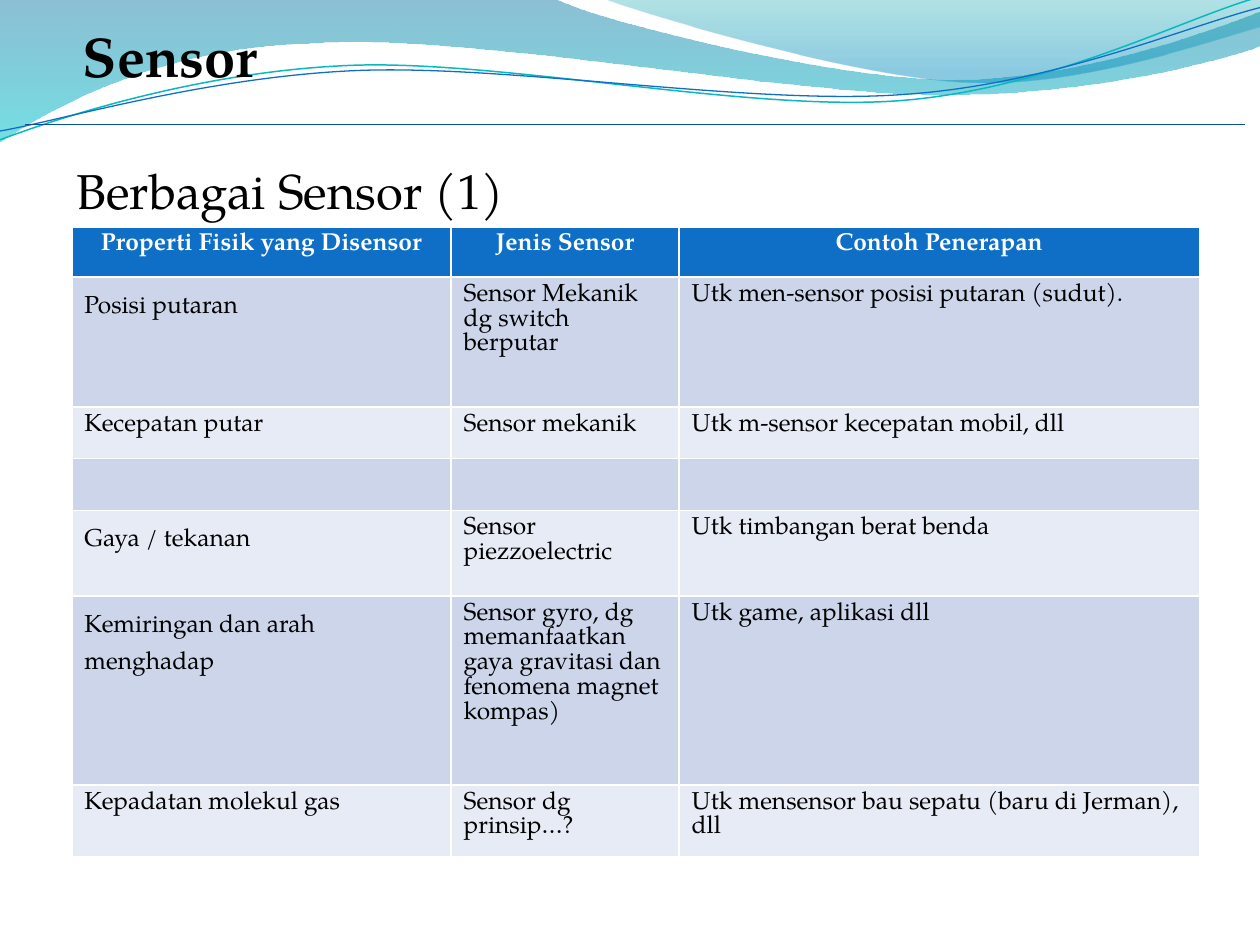
from math import cos, radians, sin

from lxml.etree import SubElement
from pptx import Presentation
from pptx.dml.color import RGBColor
from pptx.enum.shapes import MSO_CONNECTOR
from pptx.enum.text import PP_ALIGN
from pptx.oxml.ns import qn
from pptx.util import Inches, Pt

WIDTH, HEIGHT = 10, 7.5
FONT = "TeX Gyre Pagella"
BLACK = RGBColor(0x00, 0x00, 0x00)
WHITE = RGBColor(0xFF, 0xFF, 0xFF)
BLUE = RGBColor(0x0F, 0x6F, 0xC6)
TEAL = RGBColor(0x0A, 0xB8, 0xBF)
RULE_BLUE = RGBColor(0x09, 0x52, 0x95)
BANDS = [RGBColor(0xCC, 0xD5, 0xEA), RGBColor(0xE7, 0xEB, 0xF5)]

WAVES = [
    {"place": (-0.01, -0.01, 10.02, 1.14), "tilt": 0, "start": (0, 0),
     "segments": [
         [(4.4, -0.01)],
         [(4.76, 0.17), (6.64, 0.63), (7.58, 0.63)],
         [(8.53, 0.63), (9.58, 0.26), (10, 0.09)],
         [(10.01, 0.36)],
         [(9.83, 0.44), (8.7, 0.76), (7.46, 0.75)],
         [(6.22, 0.75), (3.82, 0.28), (2.57, 0.34)],
         [(1.29, 0.36), (0.46, 0.83), (-0.01, 1.13)],
         [(0, 0)]],
     "stops": [(0, RGBColor(0x00, 0x74, 0xA1), 45), (1, RGBColor(0x00, 0xC6, 0xCF), 55)]},
    {"place": (4.79, -0.01, 5.21, 0.7), "tilt": 0, "start": (4.79, -0.01),
     "segments": [
         [(5.09, 0.11), (6.82, 0.62), (7.69, 0.65)],
         [(8.56, 0.69), (9.61, 0.32), (10, 0.21)],
         [(10, 0)],
         [(4.79, -0.01)]],
     "stops": [(0, RGBColor(0x00, 0xA1, 0xA9), 30), (0.8, RGBColor(0x00, 0x8B, 0xBF), 45)]},
    {"place": (-0.02, 0.22, 10.02, 0.71), "tilt": -2.7, "start": (0, 1.11),
     "segments": [
         [(0.48, 0.93), (1.58, 0.57), (2.77, 0.52)],
         [(3.95, 0.47), (5.93, 0.89), (7.13, 0.8)],
         [(8.33, 0.71), (9.38, 0.15), (9.98, -0.02)]],
     "line": (TEAL, 0.85)},
    {"place": (-0.02, 0.3, 10.03, 0.58), "tilt": -2.7, "start": (0, 1.04),
     "segments": [
         [(0.47, 0.96), (1.64, 0.61), (2.83, 0.56)],
         [(4.03, 0.51), (5.97, 0.84), (7.17, 0.75)],
         [(8.36, 0.67), (9.41, 0.21), (10, 0.06)]],
     "line": (BLUE, 0.75)},
]
HEADINGS = [
    ("Berbagai Sensor (1)", (0.51, 0.99, 9.37, 0.81), 1.5, {"size": Pt(28), "bold": False}),
    ("Sensor", (0.56, 0.12, 8.96, 0.64), None, {"size": Pt(32), "bold": True}),
]
RULE = (0.2, 9.88, 0.99)
TABLE_AT = (0.57, 1.8)
COLUMNS = [3.01, 1.81, 4.13]
ROW_HEIGHTS = [0.4, 1.03, 0.41, 0.41, 0.68, 1.5, 0.57]
ROWS = [
    ("Properti Fisik yang Disensor", "Jenis Sensor", "Contoh Penerapan"),
    ("Posisi putaran", "Sensor Mekanik dg switch berputar", "Utk men-sensor posisi putaran (sudut)."),
    ("Kecepatan putar", "Sensor mekanik", "Utk m-sensor kecepatan mobil, dll"),
    ("", "", ""),
    ("Gaya / tekanan", "Sensor piezzoelectric", "Utk timbangan berat benda"),
    ("Kemiringan dan arah menghadap",
     "Sensor gyro, dg memanfaatkan gaya gravitasi dan fenomena magnet kompas)",
     "Utk game, aplikasi dll"),
    ("Kepadatan molekul gas", "Sensor dg prinsip…?", "Utk mensensor bau sepatu (baru di Jerman), dll"),
]
SPACED_ROWS = {1, 4, 5}


def write(para, text, color, **formats):
    span = para.add_run()
    span.text = text
    for name, value in {"name": FONT, **formats}.items():
        setattr(span.font, name, value)
    span.font.color.rgb = color


def draw_curves(shape, wave):
    left, top, width, height = wave["place"]
    angle = radians(-wave["tilt"])

    def add_step(tag, points):
        step = SubElement(outline, qn(tag))
        for x, y in points:
            across, down = x - left - width / 2, y - top - height / 2
            local_x = across * cos(angle) - down * sin(angle) + width / 2
            local_y = across * sin(angle) + down * cos(angle) + height / 2
            SubElement(step, qn("a:pt"), x=str(Inches(local_x)), y=str(Inches(local_y)))

    outline = next(shape.element.iter(qn("a:path")))
    for step in list(outline):
        outline.remove(step)
    outline.set("w", str(Inches(width)))
    outline.set("h", str(Inches(height)))
    add_step("a:moveTo", [wave["start"]])
    for points in wave["segments"]:
        add_step("a:lnTo" if len(points) == 1 else "a:cubicBezTo", points)
    if "stops" in wave:
        SubElement(outline, qn("a:close"))


def add_wave(page, wave):
    builder = page.shapes.build_freeform()
    builder.add_line_segments([(Inches(1), Inches(1))], close=False)
    shape = builder.convert_to_shape()
    for name, length in zip(("left", "top", "width", "height"), wave["place"]):
        setattr(shape, name, Inches(length))
    shape.rotation = wave["tilt"]
    shape.shadow.inherit = False
    draw_curves(shape, wave)
    if "line" in wave:
        shape.fill.background()
        color, width = wave["line"]
        shape.line.color.rgb = color
        shape.line.width = Pt(width)
        return
    shape.line.fill.background()
    shape.fill.gradient()
    shape.fill.gradient_angle = 270
    for stop, (position, color, opacity) in zip(shape.fill.gradient_stops, wave["stops"]):
        stop.position = position
        stop.color.rgb = color
    elements = shape.element.spPr.iter(qn("a:srgbClr"))
    for element, (_, _, opacity) in zip(elements, wave["stops"]):
        SubElement(element, qn("a:alpha"), val=str(opacity * 1000))


def add_sensor_table(page):
    frame = page.shapes.add_table(len(ROWS), len(COLUMNS), *map(Inches, TABLE_AT),
                                  Inches(sum(COLUMNS)), Inches(sum(ROW_HEIGHTS)))
    table = frame.table
    for column, width in zip(table.columns, COLUMNS):
        column.width = Inches(width)
    for row, height in zip(table.rows, ROW_HEIGHTS):
        row.height = Inches(height)
    for r, texts in enumerate(ROWS):
        header = r == 0
        for c, text in enumerate(texts):
            cell = table.cell(r, c)
            cell.fill.solid()
            cell.fill.fore_color.rgb = BLUE if header else BANDS[(r - 1) % 2]
            para = cell.text_frame.paragraphs[0]
            if header:
                para.alignment = PP_ALIGN.CENTER
            if c == 0 and r in SPACED_ROWS:
                para.line_spacing = 1.5
            if text:
                write(para, text, WHITE if header else BLACK, size=Pt(14), bold=header)


def main():
    deck = Presentation()
    deck.slide_width, deck.slide_height = Inches(WIDTH), Inches(HEIGHT)
    page = deck.slides.add_slide(deck.slide_layouts[6])
    for wave in WAVES:
        add_wave(page, wave)

    for text, place, spacing, formats in HEADINGS:
        box = page.shapes.add_textbox(*map(Inches, place))
        box.text_frame.word_wrap = True
        para = box.text_frame.paragraphs[0]
        para.line_spacing = spacing
        write(para, text, BLACK, **formats)

    left, right, y = map(Inches, RULE)
    rule = page.shapes.add_connector(MSO_CONNECTOR.STRAIGHT, left, y, right, y)
    rule.line.color.rgb = RULE_BLUE
    rule.line.width = Pt(0.75)
    SubElement(rule.element.spPr, qn("a:effectLst"))

    add_sensor_table(page)
    deck.save("out.pptx")


if __name__ == "__main__":
    main()
